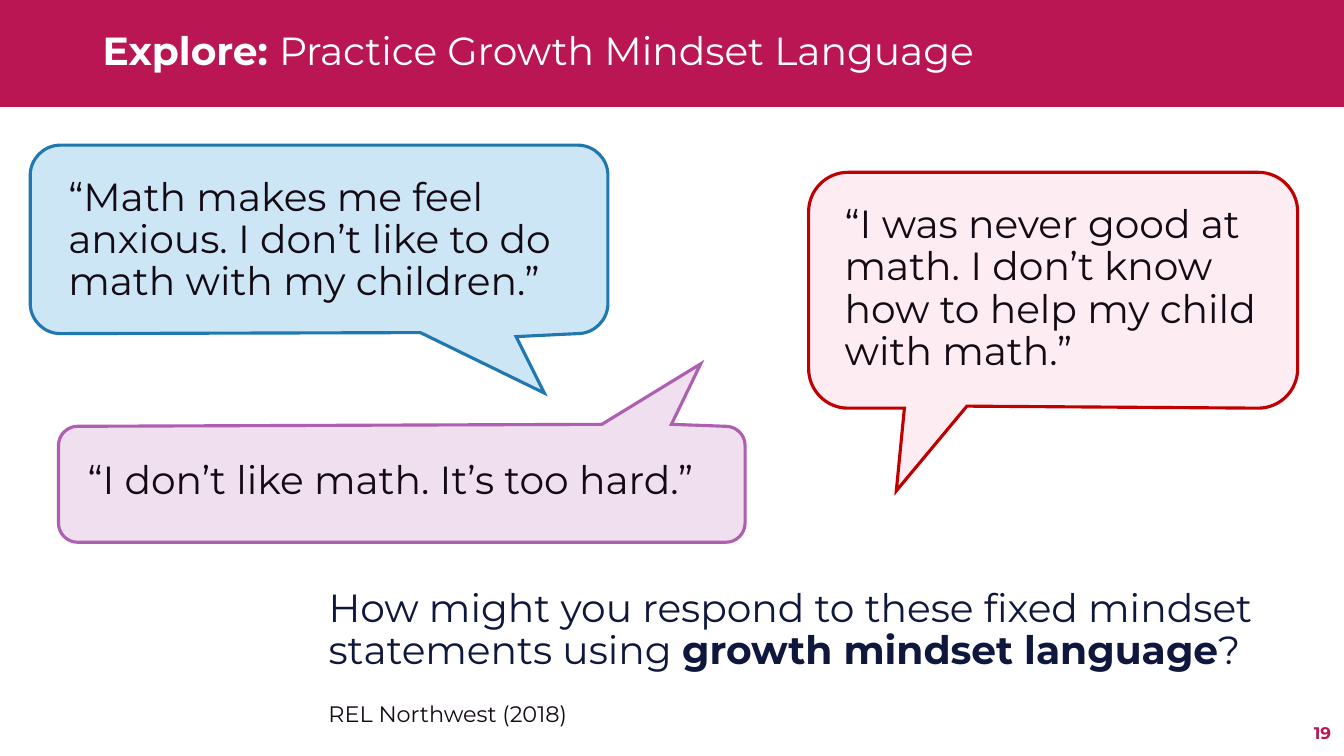
"""Build a slide of fixed mindset statements in speech bubbles."""
from dataclasses import dataclass

from lxml.etree import SubElement
from pptx import Presentation
from pptx.dml.color import RGBColor as RGB
from pptx.enum.shapes import MSO_SHAPE as SHAPE
from pptx.enum.text import MSO_ANCHOR as ANCHOR, PP_ALIGN as ALIGN
from pptx.oxml.ns import qn
from pptx.util import Inches, Pt

Point = tuple[float, float]
CRIMSON, WHITE, INK, NAVY = "BB1654", "FFFFFF", "140A14", "0F173D"
ARC_PULL = 0.55


@dataclass
class Bubble:
    left: float
    top: float
    right: float
    bottom: float
    radius: float
    tail: list[Point]
    tail_on_top: bool
    fill: str
    line: str


@dataclass
class Label:
    box: tuple[float, float, float, float]
    runs: list[tuple[str, bool]]
    color: str = INK
    size: float = 28
    spacing: float = 0.9
    align: ALIGN = ALIGN.LEFT
    anchor: ANCHOR = ANCHOR.TOP


BUBBLES = [
    Bubble(8.02, 1.71, 12.87, 4.05, 0.39, [(9.59, 4.03), (8.89, 4.87), (8.97, 4.05)],
           False, "FDEDF3", "C00000"),
    Bubble(0.58, 4.23, 7.39, 5.38, 0.19, [(5.97, 4.21), (6.95, 3.61), (6.66, 4.21)],
           True, "EFDFEF", "AF5FAF"),
    Bubble(0.3, 1.44, 6.03, 3.31, 0.3, [(5.12, 3.34), (5.4, 3.9), (4.17, 3.3)],
           False, "CCE6F6", "2078AE"),
]
LABELS = [
    Label((0.92, 0.26, 11.82, 0.53),
          [("Explore: ", True), ("Practice Growth Mindset Language", False)], WHITE),
    Label((10.3, 7.07, 3, 0.4), [("19", True)], CRIMSON, 12, 1, ALIGN.RIGHT, ANCHOR.MIDDLE),
    Label((0.58, 1.71, 5.73, 1.6),
          [("“Math makes me feel anxious. I don’t like to do math with my children.”", False)]),
    Label((8.28, 1.98, 4.76, 1.92),
          [("“I was never good at math. I don’t know how to help my child with math.”", False)]),
    Label((0.77, 4.52, 6.42, 1.27), [("“I don’t like math. It’s too hard.”", False)]),
    Label((3.16, 5.79, 9.71, 1.63),
          [("How might you respond to these fixed mindset statements using ", False),
           ("growth mindset language", True), ("?", False)], NAVY),
    Label((3.16, 6.9, 6.67, 0.37), [("REL Northwest (2018)", False)], size=16, spacing=1),
]


def rgb(value: str) -> RGB:
    """Turn a hex string into a colour."""
    return RGB.from_string(value)


def set_all(target: object, formats: dict[str, object]) -> None:
    """Set each format value on the target."""
    for name, value in formats.items():
        setattr(target, name, value)


def outline(b: Bubble) -> tuple[list[Point], list[int]]:
    """Return the clockwise outline and the indexes where corners end."""
    r = b.radius
    x1, x2, y1, y2 = b.left + r, b.right - r, b.top + r, b.bottom - r
    top, bottom = (b.tail, []) if b.tail_on_top else ([], b.tail)
    points = [(b.left, y1), (x1, b.top), *top, (x2, b.top), (b.right, y1),
              (b.right, y2), (x2, b.bottom), *bottom, (x1, b.bottom), (b.left, y2)]
    right = 3 + len(top)
    return points, [1, right, right + 2, len(points) - 1]


def round_corners(sp, ends: list[int]) -> None:
    """Turn the corner segments of a freeform into curves."""
    contour = next(sp._element.iter(qn("a:path")))
    steps = list(contour)
    spots = [[int(pt.get(axis)) for axis in "xy"] for pt in contour.iter(qn("a:pt"))]
    for number, end in enumerate(ends):
        (x1, y1), (x2, y2) = spots[end - 1], spots[end]
        peak = (x2, y1) if number % 2 else (x1, y2)
        curve = SubElement(contour, qn("a:cubicBezTo"))
        pulls = [[round(a + (c - a) * ARC_PULL) for a, c in zip(spot, peak)]
                 for spot in ((x1, y1), (x2, y2))]
        for x, y in [*pulls, (x2, y2)]:
            SubElement(curve, qn("a:pt"), x=str(x), y=str(y))
        contour.replace(steps[end], curve)


def draw_bubble(s, b: Bubble) -> None:
    """Draw a speech bubble."""
    points, ends = outline(b)
    start, *others = [(Inches(x), Inches(y)) for x, y in points]
    builder = s.shapes.build_freeform(*start)
    builder.add_line_segments(others, close=True)
    sp = builder.convert_to_shape()
    round_corners(sp, ends)
    sp.shadow.inherit = False
    sp.fill.solid()
    sp.fill.fore_color.rgb = rgb(b.fill)
    sp.line.color.rgb = rgb(b.line)
    sp.line.width = Pt(2.25)
    SubElement(sp._element.spPr.find(qn("a:ln")), qn("a:miter"), lim="800000")


def draw_label(s, label: Label) -> None:
    """Draw a text box with its runs."""
    tf = s.shapes.add_textbox(*map(Inches, label.box)).text_frame
    set_all(tf, {"word_wrap": True, "vertical_anchor": label.anchor})
    p = tf.paragraphs[0]
    set_all(p, {"alignment": label.align, "line_spacing": label.spacing})
    for text, bold in label.runs:
        r = p.add_run()
        r.text = text
        set_all(r.font, {"name": "Montserrat", "size": Pt(label.size), "bold": bold})
        r.font.color.rgb = rgb(label.color)


def main() -> None:
    """Build and save the slide."""
    prs = Presentation()
    set_all(prs, {"slide_width": Inches(13.33), "slide_height": Inches(7.5)})
    s = prs.slides.add_slide(prs.slide_layouts[6])
    banner = s.shapes.add_shape(SHAPE.RECTANGLE, 0, 0, prs.slide_width, Inches(1.06))
    banner.shadow.inherit = False
    banner.fill.solid()
    banner.fill.fore_color.rgb = rgb(CRIMSON)
    banner.line.fill.background()
    for bubble in BUBBLES:
        draw_bubble(s, bubble)
    for label in LABELS:
        draw_label(s, label)
    prs.save("out.pptx")


if __name__ == "__main__":
    main()
